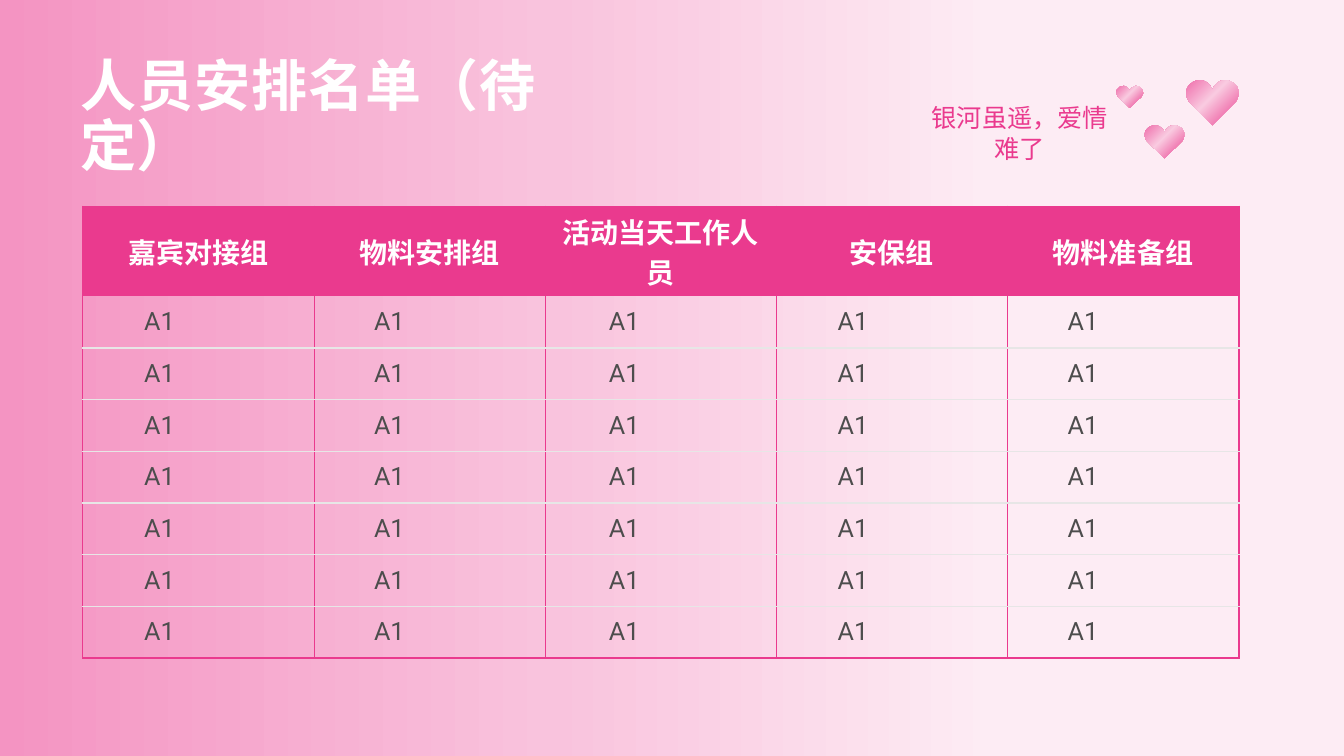
from dataclasses import dataclass
from typing import Any

from lxml.etree import SubElement
from pptx import Presentation
from pptx.dml.color import RGBColor
from pptx.enum.text import MSO_ANCHOR, MSO_AUTO_SIZE, PP_ALIGN
from pptx.oxml.ns import qn
from pptx.util import Inches, Pt


@dataclass(frozen=True)
class TextStyle:
    size: float
    name: str
    color: str
    bold: bool = False


@dataclass(frozen=True)
class Theme:
    pink: str = "EA3A8E"
    rule: str = "E7E6E6"
    rule_width: float = 1
    title: TextStyle = TextStyle(40, "Noto Sans CJK SC", "FFFFFF", True)
    header: TextStyle = TextStyle(20, "Noto Sans CJK SC", "FFFFFF", True)
    motto: TextStyle = TextStyle(18, "Roboto", "EA3A8E")
    body: TextStyle = TextStyle(18, "Roboto", "4D4D4D")


@dataclass(frozen=True)
class Stop:
    percent: int
    color: str
    alpha: int = 100


@dataclass(frozen=True)
class Heart:
    left: float
    top: float
    width: float
    height: float


@dataclass(frozen=True)
class Group:
    name: str
    widths: tuple[float, float, float]


THEME = Theme()
BACKGROUND = (Stop(26, "FDECF4"), Stop(59, "F9C3DD"), Stop(100, "F494C2", 55))
HEART_FILL = (Stop(0, "EA3A8E"), Stop(56, "F9CBE1"), Stop(100, "EF6BAA"))
HEARTS = (
    Heart(11.76, 0.79, 0.53, 0.45),
    Heart(11.35, 1.24, 0.4, 0.33),
    Heart(11.07, 0.85, 0.27, 0.22),
)
HEART_GRID = (53, 45)
HEART_HALF = (
    (0, 10),
    (2, 5), (6, 1), (11.5, 0.5),
    (17, 0), (22, 3), (25, 8),
    (27, 13), (26, 18), (23, 22),
)
HEART_CURVE_STARTS = (0, 3, 6, 11, 14, 17)
GROUPS = (
    Group("嘉宾对接组", (0.51, 1.33, 0.46)),
    Group("物料安排组", (0.49, 1.33, 0.47)),
    Group("活动当天工作人员", (0.53, 1.26, 0.5)),
    Group("安保组", (0.51, 1.38, 0.4)),
    Group("物料准备组", (0.5, 1.26, 0.54)),
)
BODY_ROWS = 7
TABLE_HEIGHT = 4.49
HEADER_HEIGHT = 0.9
ROW_HEIGHT = (TABLE_HEIGHT - HEADER_HEIGHT) / BODY_ROWS
NO_TABLE_STYLE = "{2D5ABB26-0587-4C30-8999-92F81FD0307C}"


def apply_formats(target: Any, formats: dict[str, Any]) -> None:
    for name, value in formats.items():
        setattr(target, name, value)


def write(frame: Any, text: str, style: TextStyle, formats: dict[str, Any]) -> None:
    para = frame.paragraphs[0]
    apply_formats(para, formats)
    span = para.add_run()
    span.text = text
    apply_formats(span.font, {"size": Pt(style.size), "name": style.name, "bold": style.bold})
    span.font.color.rgb = RGBColor.from_string(style.color)
    SubElement(span.font._element, qn("a:ea"), typeface=style.name)


def fill_gradient(owner: Any, fill: Any, stops: tuple[Stop, ...], angle: int | None) -> None:
    fill.gradient()
    gradient = owner.element.find(".//" + qn("a:gradFill"))
    for child in list(gradient):
        gradient.remove(child)
    stop_list = SubElement(gradient, qn("a:gsLst"))
    for stop in stops:
        entry = SubElement(stop_list, qn("a:gs"), pos=str(stop.percent * 1000))
        color = SubElement(entry, qn("a:srgbClr"), val=stop.color)
        if stop.alpha < 100:
            SubElement(color, qn("a:alpha"), val=str(stop.alpha * 1000))
    if angle is None:
        circle = SubElement(gradient, qn("a:path"))
        circle.set("path", "circle")
        SubElement(circle, qn("a:fillToRect"), l="100000", t="100000")
    else:
        SubElement(gradient, qn("a:lin"), ang=str(angle * 60000), scaled="0")


def round_outline(shape: Any) -> None:
    lines = list(shape.element.iter(qn("a:lnTo")))
    for start in HEART_CURVE_STARTS:
        first, second, third = lines[start : start + 3]
        curve = first.makeelement(qn("a:cubicBezTo"))
        first.addprevious(curve)
        for line in (first, second, third):
            curve.append(line[0])
            line.getparent().remove(line)


def draw_heart(page: Any, heart: Heart) -> None:
    left_half = [(-x, y) for x, y in reversed(HEART_HALF)]
    grid_width, grid_height = HEART_GRID
    points = [
        (
            Inches(heart.left + heart.width * (0.5 + x / grid_width)),
            Inches(heart.top + heart.height * y / grid_height),
        )
        for x, y in [*HEART_HALF, (0, grid_height), *left_half]
    ]
    builder = page.shapes.build_freeform(*points[0])
    builder.add_line_segments(points[1:], close=True)
    shape = builder.convert_to_shape()
    round_outline(shape)
    shape.shadow.inherit = False
    shape.line.fill.background()
    fill_gradient(shape, shape.fill, HEART_FILL, None)


def set_borders(cell: Any, borders: dict[str, str]) -> None:
    properties = cell._tc.get_or_add_tcPr()
    for side in "LRTB":
        line = SubElement(properties, qn(f"a:ln{side}"), w=str(Pt(THEME.rule_width)))
        if side in borders:
            solid = SubElement(line, qn("a:solidFill"))
            SubElement(solid, qn("a:srgbClr"), val=borders[side])
        else:
            SubElement(line, qn("a:noFill"))


def body_borders(row: int, part: int) -> dict[str, str]:
    borders = {"B": THEME.pink if row == BODY_ROWS else THEME.rule}
    if row > 1:
        borders["T"] = THEME.rule
    if part == 0:
        borders["L"] = THEME.pink
    if part == 2:
        borders["R"] = THEME.pink
    return borders


def draw_table(page: Any) -> None:
    widths = [width for group in GROUPS for width in group.widths]
    heights = [HEADER_HEIGHT] + [ROW_HEIGHT] * BODY_ROWS
    area = (Inches(value) for value in (0.82, 2.04, sum(widths), TABLE_HEIGHT))
    table = page.shapes.add_table(len(heights), len(widths), *area).table
    apply_formats(table, {"first_row": False, "horz_banding": False})
    table._tbl.tblPr.find(qn("a:tableStyleId")).text = NO_TABLE_STYLE
    for column, width in zip(table.columns, widths):
        column.width = Inches(width)
    for row, height in zip(table.rows, heights):
        row.height = Inches(height)
    for index, group in enumerate(GROUPS):
        first = index * 3
        header = table.cell(0, first)
        header.merge(table.cell(0, first + 2))
        header.vertical_anchor = MSO_ANCHOR.MIDDLE
        write(header.text_frame, group.name, THEME.header, {"alignment": PP_ALIGN.CENTER})
        set_borders(header, {"L": THEME.pink, "R": THEME.pink})
        header.fill.solid()
        header.fill.fore_color.rgb = RGBColor.from_string(THEME.pink)
        for row in range(1, BODY_ROWS + 1):
            for part in range(3):
                cell = table.cell(row, first + part)
                cell.vertical_anchor = MSO_ANCHOR.MIDDLE
                set_borders(cell, body_borders(row, part))
                cell.fill.background()
            write(table.cell(row, first + 1).text_frame, "A1", THEME.body, {"alignment": PP_ALIGN.JUSTIFY})


def main() -> None:
    deck = Presentation()
    apply_formats(deck, {"slide_width": Inches(13.33), "slide_height": Inches(7.5)})
    page = deck.slides.add_slide(deck.slide_layouts[5])
    fill_gradient(page, page.background.fill, BACKGROUND, 180)
    for heart in HEARTS:
        draw_heart(page, heart)
    motto = page.shapes.add_textbox(Inches(9.09), Inches(0.97), Inches(2.05), Inches(0.4)).text_frame
    apply_formats(motto, {"word_wrap": True, "auto_size": MSO_AUTO_SIZE.SHAPE_TO_FIT_TEXT})
    write(motto, "银河虽遥，爱情难了", THEME.motto, {"alignment": PP_ALIGN.CENTER})
    title = page.shapes.title
    place = {"left": 0.7, "top": 0.79, "width": 4.71, "height": 0.77}
    apply_formats(title, {name: Inches(value) for name, value in place.items()})
    frame = {"word_wrap": True, "auto_size": MSO_AUTO_SIZE.NONE, "vertical_anchor": MSO_ANCHOR.MIDDLE}
    apply_formats(title.text_frame, frame)
    write(title.text_frame, "人员安排名单（待定）", THEME.title, {"alignment": PP_ALIGN.JUSTIFY, "line_spacing": 0.9})
    draw_table(page)
    deck.save("out.pptx")


if __name__ == "__main__":
    main()
